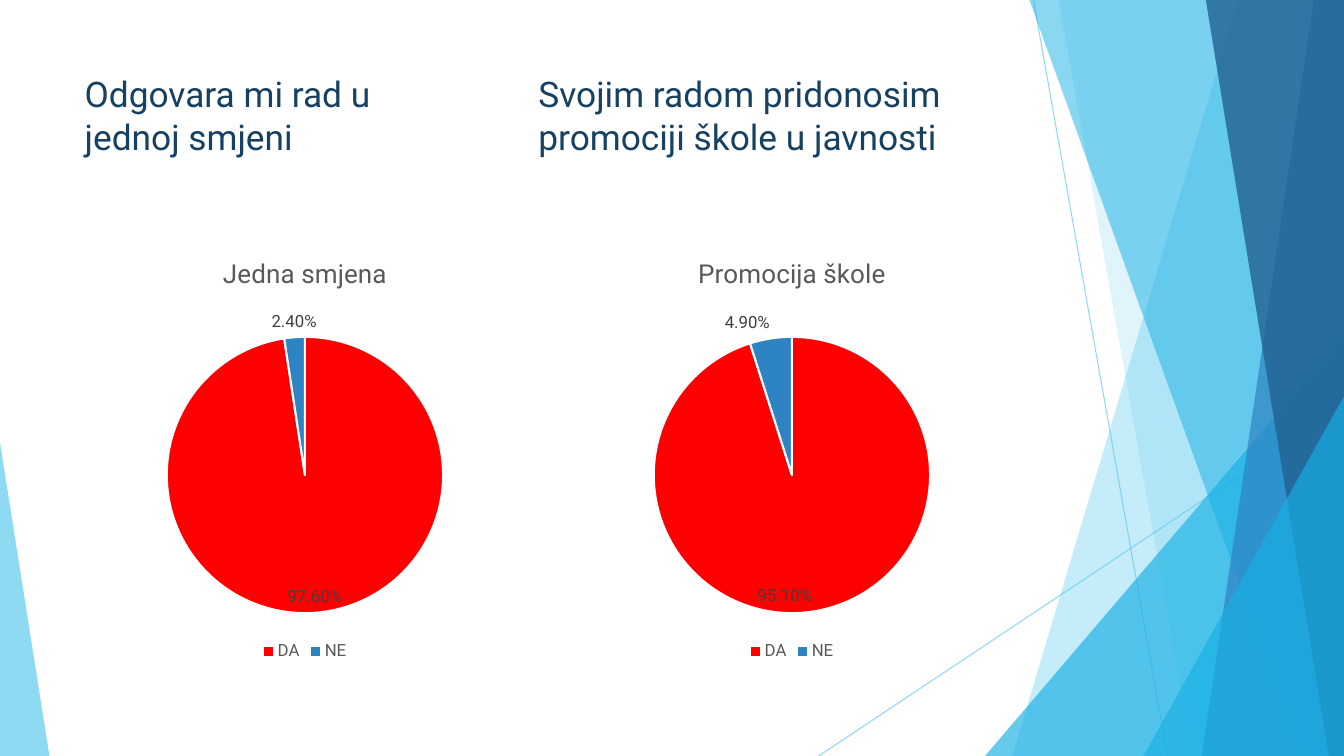
from pptx import Presentation
from pptx.chart.data import CategoryChartData
from pptx.dml.color import RGBColor
from pptx.enum.chart import XL_CHART_TYPE, XL_LABEL_POSITION as LABEL, XL_LEGEND_POSITION as LEGEND
from pptx.enum.shapes import MSO_CONNECTOR, MSO_SHAPE
from pptx.enum.text import MSO_ANCHOR, MSO_AUTO_SIZE, PP_ALIGN
from pptx.oxml import parse_xml
from pptx.oxml.ns import nsdecls, qn
from pptx.oxml.xmlchemy import OxmlElement
from pptx.util import Inches, Pt

FONT = "Roboto"
NAVY = RGBColor(0x17, 0x41, 0x62)
SKY = RGBColor(0x5F, 0xCB, 0xEF)
CYAN = RGBColor(0x17, 0xB0, 0xE4)
BLUE = RGBColor(0x2E, 0x83, 0xC3)
DEEP_BLUE = RGBColor(0x22, 0x62, 0x92)
RED = RGBColor(0xFF, 0x00, 0x00)
WHITE = RGBColor(0xFF, 0xFF, 0xFF)
GREY = RGBColor(0x59, 0x59, 0x59)
DARK_GREY = RGBColor(0x40, 0x40, 0x40)
WIDTH, HEIGHT = 13.33, 7.5


def style_font(font, size, color):
    """Apply the slide typeface with a size and colour."""
    font.name, font.size, font.bold = FONT, Pt(size), False
    font.color.rgb = color


def write(frame, text, size=12, color=GREY, align=None):
    """Put formatted text into a text frame."""
    frame.text = text
    for paragraph in frame.paragraphs:
        paragraph.alignment = align
        for run in paragraph.runs:
            style_font(run.font, size, color)


def set_opacity(shape, percent):
    """Make the shape's colour partly transparent."""
    for color in shape.element.spPr.iter(qn("a:srgbClr")):
        alpha = OxmlElement("a:alpha")
        alpha.set("val", str(percent * 1000))
        color.append(alpha)


def paint(shape, color, opacity):
    """Give a facet a translucent fill without line or shadow."""
    shape.shadow.inherit = False
    shape.fill.solid()
    shape.fill.fore_color.rgb = color
    shape.line.fill.background()
    set_opacity(shape, opacity)


def add_ray(slide, start, end):
    """Draw a thin translucent line."""
    ray = slide.shapes.add_connector(
        MSO_CONNECTOR.STRAIGHT, *(Inches(value) for value in start + end))
    ray.line.color.rgb = SKY
    ray.line.width = Pt(0.75)
    set_opacity(ray, 70)
    ray.element.spPr.append(OxmlElement("a:effectLst"))


def add_band(slide, box, top_x, bottom_x, color, opacity):
    """Draw a band from a slanted left edge to the right side of the box."""
    left, top, width, height = box
    right, bottom = left + width, top + height
    corners = [(left + top_x, top), (right, top), (right, bottom), (left + bottom_x, bottom)]
    points = [(Inches(x), Inches(y)) for x, y in corners]
    builder = slide.shapes.build_freeform(*points[0])
    builder.add_line_segments(points[1:], close=True)
    paint(builder.convert_to_shape(), color, opacity)


def add_wedge(slide, box, apex, color, opacity):
    """Draw a triangle whose apex sits at a fraction of its width."""
    wedge = slide.shapes.add_shape(MSO_SHAPE.ISOSCELES_TRIANGLE, *(Inches(v) for v in box))
    wedge.adjustments[0] = apex
    paint(wedge, color, opacity)


def add_facets(slide, box):
    """Draw the layered facets at the right of the box and the wedge at its left."""
    left, top, width, height = box
    right, bottom = left + width, top + height

    def corner(wedge_width, wedge_height):
        return right - wedge_width, bottom - wedge_height, wedge_width, wedge_height

    add_ray(slide, (left + 10.25, top), (left + 11.58, bottom))
    add_ray(slide, (right, top + 4.03), (left + 8.12, bottom))
    add_band(slide, box, 12.28, 10.04, SKY, 36)
    add_band(slide, box, 10.5, 11.83, SKY, 20)
    add_wedge(slide, corner(3.56, 4.17), 1, CYAN, 66)
    add_band(slide, box, 10.21, 12.91, CYAN, 50)
    add_band(slide, box, 13.03, 11.92, BLUE, 70)
    add_band(slide, box, 11.96, 13.18, DEEP_BLUE, 80)
    add_wedge(slide, corner(1.99, 3.57), 1, CYAN, 66)
    add_wedge(slide, (left, bottom - 3.11, 0.49, 3.11), 0, SKY, 70)


def add_headings(slide, box):
    """Set the two headings side by side in the title, split by a tab stop."""
    title = slide.shapes.title
    title.left, title.top, title.width, title.height = (Inches(v) for v in box)
    frame = title.text_frame
    frame.word_wrap = True
    frame.auto_size = MSO_AUTO_SIZE.NONE
    frame.vertical_anchor = MSO_ANCHOR.TOP
    write(frame, "Odgovara mi rad u\tSvojim radom pridonosim\v"
          "jednoj smjeni\tpromociji škole u javnosti", size=25.2, color=NAVY, align=PP_ALIGN.LEFT)
    tabs = parse_xml(f'<a:tabLst {nsdecls("a")}><a:tab pos="{Inches(4.5)}" algn="l"/></a:tabLst>')
    frame.paragraphs[0]._p.get_or_add_pPr().append(tabs)
    title.element.getparent().append(title.element)


def fix_plot_area(chart, x, y, w, h):
    """Place the pie at fractions of the chart frame."""
    plot_area = chart.element.find(".//" + qn("c:plotArea"))
    for layout in plot_area.findall(qn("c:layout")):
        plot_area.remove(layout)
    plot_area.insert(0, parse_xml(
        f'<c:layout {nsdecls("c")}><c:manualLayout><c:layoutTarget val="inner"/>'
        '<c:xMode val="edge"/><c:yMode val="edge"/>'
        f'<c:x val="{x}"/><c:y val="{y}"/><c:w val="{w}"/><c:h val="{h}"/>'
        '</c:manualLayout></c:layout>'))


def add_answer_pie(slide, box, heading, yes, no):
    """Draw a pie of the DA and NE shares with title and legend."""
    data = CategoryChartData(number_format="0.00%")
    data.categories = ["DA", "NE"]
    data.add_series(heading, (yes, no))
    chart = slide.shapes.add_chart(
        XL_CHART_TYPE.PIE, *(Inches(v) for v in box), data).chart
    style_font(chart.font, 12, GREY)
    chart.has_title = True
    write(chart.chart_title.text_frame, heading, size=18.6)
    chart.chart_title.include_in_layout = False
    chart.has_legend = True
    chart.legend.position = LEGEND.BOTTOM
    chart.legend.include_in_layout = False
    style_font(chart.legend.font, 12, GREY)
    plot = chart.plots[0]
    plot.vary_by_categories = True
    slices = [(RED, LABEL.INSIDE_END), (BLUE, LABEL.OUTSIDE_END)]
    for index, (color, position) in enumerate(slices):
        answer = plot.series[0].points[index]
        answer.format.fill.solid()
        answer.format.fill.fore_color.rgb = color
        answer.format.line.color.rgb = WHITE
        answer.format.line.width = Pt(1.5)
        style_font(answer.data_label.font, 12, DARK_GREY)
        answer.data_label.position = position
    fix_plot_area(chart, 0.2, 0.23, 0.6, 0.65)


def main():
    """Build the slide and save it."""
    deck = Presentation()
    deck.slide_width, deck.slide_height = Inches(WIDTH), Inches(HEIGHT)
    slide = deck.slides.add_slide(deck.slide_layouts[5])
    add_facets(slide, (0, 0, WIDTH, HEIGHT))
    add_headings(slide, (0.74, 0.67, 9.4, 1.44))
    add_answer_pie(slide, (0.74, 2.36, 4.57, 4.24), "Jedna smjena", 0.976, 0.024)
    add_answer_pie(slide, (5.57, 2.36, 4.57, 4.24), "Promocija škole", 0.951, 0.049)
    deck.save("out.pptx")


if __name__ == "__main__":
    main()
